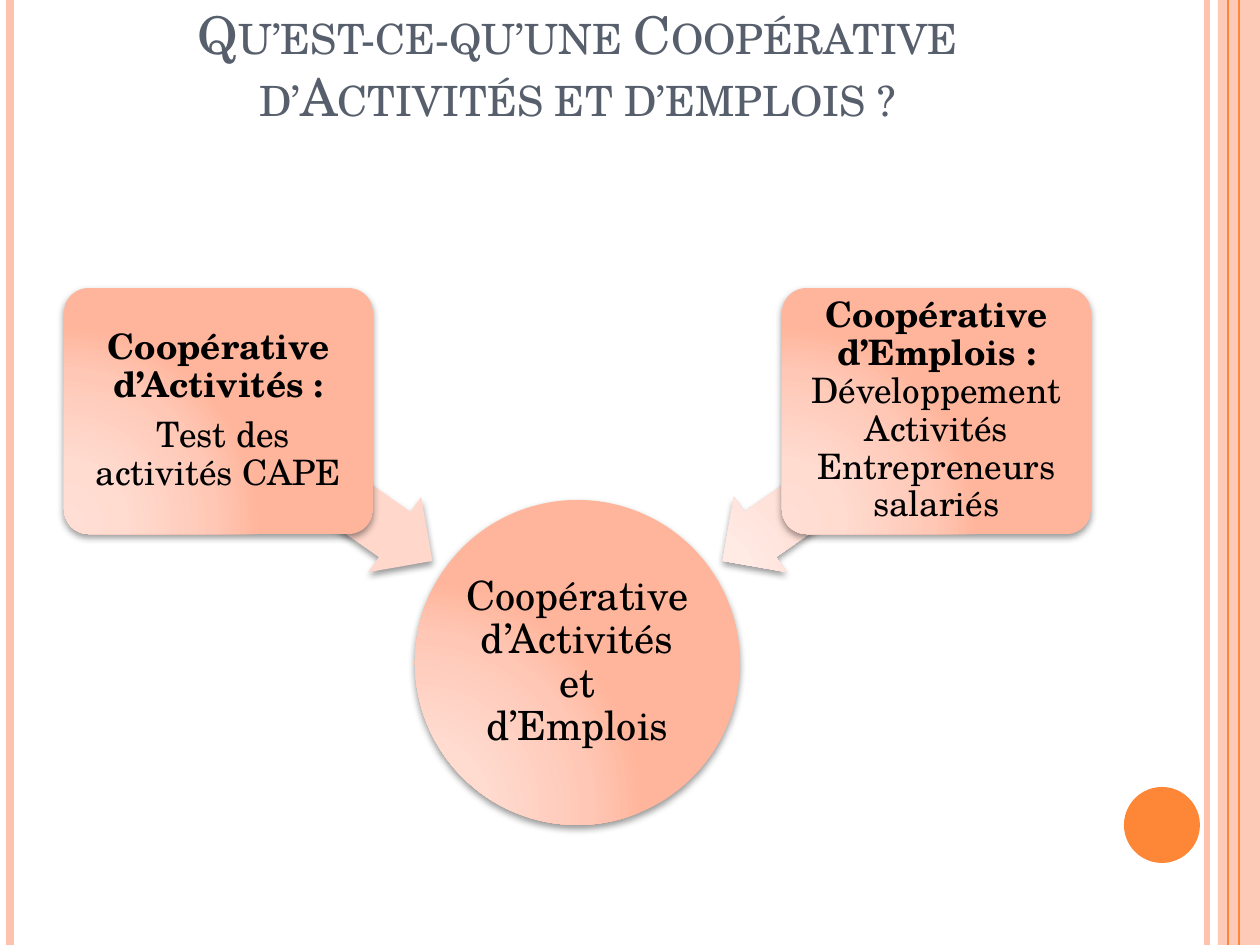
from pptx import Presentation, util as u
from pptx.dml.color import RGBColor
from pptx.enum import shapes as s, text as t
from pptx.oxml import ns, parse_xml

PX = 914400 / 126
W, H = 1260, 945
AXIS = 1155  # left edge + right edge of mirrored parts
PEACH, ORANGE = "FEC3AE", "FE8637"
SOLID = ["FFDED5", "FFDBD0", "FFC8B6", "FFB59B"]
PALE = ["FFECE7", "FFEAE4", "FFE0D7", "FFD7CB"]
A = ns.nsdecls("a")


def glossy(kind, box, colours):
    """Add a shape with a circular gradient and a soft shadow below it."""
    shape = slide.shapes.add_shape(kind, *[round(v * PX) for v in box])
    shape.line.fill.background()
    shape.shadow.inherit = False
    stops = "".join(f'<a:gs pos="{pos}000"><a:srgbClr val="{c}"/></a:gs>'
                    for pos, c in zip((0, 30, 75, 100), colours))
    props = shape._element.spPr
    props.find(ns.qn("a:ln")).addprevious(parse_xml(
        f'<a:gradFill {A} rotWithShape="1"><a:gsLst>{stops}</a:gsLst><a:path path="circle">'
        '<a:fillToRect l="5000" t="100000" r="120000" b="10000"/></a:path></a:gradFill>'))
    props.find(ns.qn("a:effectLst")).append(parse_xml(
        f'<a:outerShdw {A} blurRad="50800" dist="25400" dir="5400000" rotWithShape="0">'
        '<a:srgbClr val="000000"><a:alpha val="40000"/></a:srgbClr></a:outerShdw>'))
    return shape


def write(shape, paragraphs, size, colour, inset, spacing=1.0, anchor=t.MSO_ANCHOR.MIDDLE):
    """Fill a shape with centred paragraphs, each a list of (words, bold)."""
    frame = shape.text_frame
    layout = dict(word_wrap=True, vertical_anchor=anchor)
    sides = ("margin_left", "margin_top", "margin_right", "margin_bottom")
    layout.update((side, round(v * PX)) for side, v in zip(sides, inset))
    for name, value in layout.items():
        setattr(frame, name, value)
    for i, runs in enumerate(paragraphs):
        para = frame.add_paragraph() if i else frame.paragraphs[0]
        para.alignment, para.line_spacing = t.PP_ALIGN.CENTER, spacing
        if i < len(paragraphs) - 1:
            para.space_after = u.Pt(7)
        for words, bold in runs:
            run = para.add_run()
            run.text = words
            look = dict(name="TeX Gyre Schola", size=u.Pt(size), bold=bold)
            for name, value in look.items():
                setattr(run.font, name, value)
            run.font.color.rgb = RGBColor.from_string(colour)


prs = Presentation()
prs.slide_width, prs.slide_height = round(W * PX), round(H * PX)
slide = prs.slides.add_slide(prs.slide_layouts[6])

# Side band, rules and corner dot
for kind, box, colour, alpha in [
    (s.MSO_SHAPE.RECTANGLE, (1218, 0, 42, H), PEACH, 87),
    (s.MSO_SHAPE.OVAL, (1124, 787, 76, 76), ORANGE, 100),
]:
    mark = slide.shapes.add_shape(kind, *[round(v * PX) for v in box])
    mark.shadow.inherit = False
    mark.line.fill.background()
    mark.fill.solid()
    mark.fill.fore_color.rgb = RGBColor.from_string(colour)
    if alpha < 100:
        mark._element.spPr.find(".//" + ns.qn("a:srgbClr")).append(
            parse_xml(f'<a:alpha {A} val="{alpha}000"/>'))

for x, colour, width in [(1207, PEACH, 3), (10, PEACH, 4.5),
                         (1239, ORANGE, 1.5), (1228, ORANGE, 0.75)]:
    rule = slide.shapes.add_connector(s.MSO_CONNECTOR.STRAIGHT, round(x * PX), 0,
                                      round(x * PX), round(H * PX))
    rule.line.width = u.Pt(width)
    rule.line.color.rgb = RGBColor.from_string(colour)
    rule._element.spPr.append(parse_xml(f"<a:effectLst {A}/>"))

# Title in small capitals, raised above the foot of its box
title = slide.shapes.add_textbox(*[round(v * PX) for v in (63, 38, 1029, 157)])
write(title, [[("Qu’est-ce-qu’une Coopérative d’Activités et d’emplois ?", False)]],
      29.7, "575F6D", (13, 6, 13, 68), anchor=t.MSO_ANCHOR.BOTTOM)
title.text_frame.paragraphs[0].runs[0].font._element.set("cap", "small")

# Central circle
circle = glossy(s.MSO_SHAPE.OVAL, (415, 500, 325, 325), SOLID)
write(circle, [[("Coopérative d’Activités et d’Emplois", False)]],
      23, "000000", (3, 3, 3, 3), 0.9)

# Two mirrored boxes, each with an arrow to the circle
activities = [[("Coopérative d’Activités :", True)], [(" Test des activités CAPE", False)]]
jobs = [[("Coopérative d’Emplois : ", True),
         ("Développement Activités Entrepreneurs salariés", False)]]
for arrow_x, box_x, angle, paragraphs in [
    (195, 64, 215, activities),
    (AXIS - 195 - 261, AXIS - 64 - 309, 325, jobs),
]:
    arrow = glossy(s.MSO_SHAPE.LEFT_ARROW, (arrow_x, 440, 261, 92), PALE)
    arrow.rotation = angle
    arrow.adjustments[0] = 0.6
    box = glossy(s.MSO_SHAPE.ROUNDED_RECTANGLE, (box_x, 288, 309, 246), SOLID)
    box.adjustments[0] = 0.1
    write(box, paragraphs, 20, "000000", (5, 5, 5, 5), 0.9)

prs.save("out.pptx")
